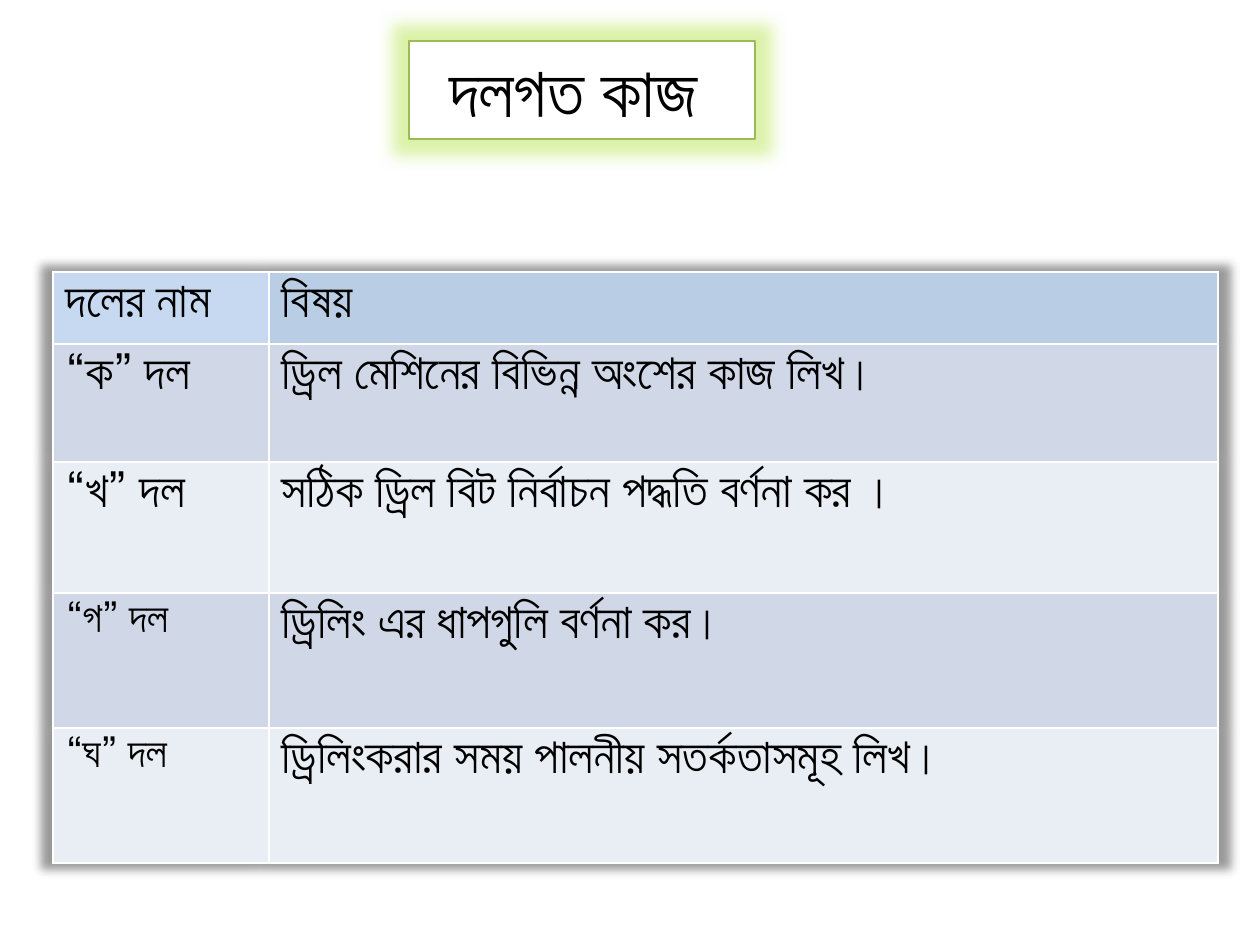
from dataclasses import dataclass

from lxml import etree
from pptx import Presentation
from pptx.dml.color import RGBColor
from pptx.enum.text import MSO_ANCHOR, MSO_AUTO_SIZE, PP_ALIGN
from pptx.oxml.ns import qn
from pptx.util import Emu, Pt

CENTER = PP_ALIGN.CENTER
MIDDLE = MSO_ANCHOR.MIDDLE
NO_AUTOFIT = MSO_AUTO_SIZE.NONE
PX = 914400 // 126
FONT = "Lato"
BLACK = "000000"
WHITE = "FFFFFF"
TITLE_ONLY = 5


@dataclass
class Row:
    height: int
    name: str
    task: str
    fills: tuple[str, str]
    name_size: int = 28


DARK_BAND = ("D0D8E8", "D0D8E8")
LIGHT_BAND = ("E9EDF4", "E9EDF4")
COLUMN_WIDTHS = (216, 949)
ROWS = [
    Row(72, "দলের নাম", "বিষয়", ("C6D9F1", "B9CDE5")),
    Row(118, "“ক” দল", "ড্রিল মেশিনের বিভিন্ন অংশের কাজ লিখ।", DARK_BAND),
    Row(131, "“খ” দল", "সঠিক ড্রিল বিট নির্বাচন পদ্ধতি বর্ণনা কর ।", LIGHT_BAND),
    Row(135, "“গ” দল", "ড্রিলিং এর ধাপগুলি বর্ণনা কর।", DARK_BAND, 24),
    Row(135, "“ঘ” দল", "ড্রিলিংকরার সময় পালনীয় সতর্কতাসমূহ লিখ।", LIGHT_BAND, 24),
]


def px(length: int) -> Emu:
    return Emu(length * PX)


def color(value: str) -> RGBColor:
    return RGBColor.from_string(value)


def add_effect(effects, kind: str, value: str, alpha: int, **attributes: str) -> None:
    effect = etree.SubElement(effects, qn(f"a:{kind}"), attributes)
    tint = etree.SubElement(effect, qn("a:srgbClr"), val=value)
    etree.SubElement(tint, qn("a:alpha"), val=str(alpha * 1000))


def write(frame, text: str, size: int):
    para = frame.paragraphs[0]
    span = para.add_run()
    span.text = text
    span.font.name = FONT
    span.font.size = Pt(size)
    span.font.color.rgb = color(BLACK)
    return para


def add_title(page) -> None:
    box = page.shapes.title
    box.left, box.top, box.width, box.height = map(px, (409, 41, 346, 98))
    box.fill.solid()
    box.fill.fore_color.rgb = color(WHITE)
    box.line.color.rgb = color("9BBB59")
    box.line.width = Pt(0.75)
    effects = etree.SubElement(box.element.spPr, qn("a:effectLst"))
    add_effect(effects, "glow", "A8E02A", 40, rad=str(Pt(18)))
    box.text_frame.auto_size = NO_AUTOFIT
    box.text_frame.vertical_anchor = MIDDLE
    write(box.text_frame, "দলগত কাজ ", 40).alignment = CENTER


def style_cell(cell, fill: str) -> None:
    properties = cell._tc.get_or_add_tcPr()
    for side in "LRTB":
        border = etree.SubElement(properties, qn(f"a:ln{side}"), w=str(Pt(1)))
        paint = etree.SubElement(border, qn("a:solidFill"))
        etree.SubElement(paint, qn("a:srgbClr"), val=WHITE)
    cell.fill.solid()
    cell.fill.fore_color.rgb = color(fill)


def add_group_table(page) -> None:
    width = px(sum(COLUMN_WIDTHS))
    height = px(sum(row.height for row in ROWS))
    table = page.shapes.add_table(
        len(ROWS), len(COLUMN_WIDTHS), px(53), px(272), width, height
    ).table
    effects = etree.Element(qn("a:effectLst"))
    add_effect(
        effects, "outerShdw", BLACK, 40,
        blurRad=str(Pt(5)), sx="102000", sy="102000", algn="ctr", rotWithShape="0",
    )
    table._tbl.tblPr.insert(0, effects)
    for column, column_width in zip(table.columns, COLUMN_WIDTHS):
        column.width = px(column_width)
    for index, row in enumerate(ROWS):
        table.rows[index].height = px(row.height)
        texts = ((row.name, row.name_size), (row.task, 28))
        for cell, (text, size), fill in zip(table.rows[index].cells, texts, row.fills):
            style_cell(cell, fill)
            write(cell.text_frame, text, size).font.bold = False


def main() -> None:
    deck = Presentation()
    deck.slide_width, deck.slide_height = px(1260), px(945)
    page = deck.slides.add_slide(deck.slide_layouts[TITLE_ONLY])
    add_title(page)
    add_group_table(page)
    deck.save("out.pptx")


if __name__ == "__main__":
    main()
